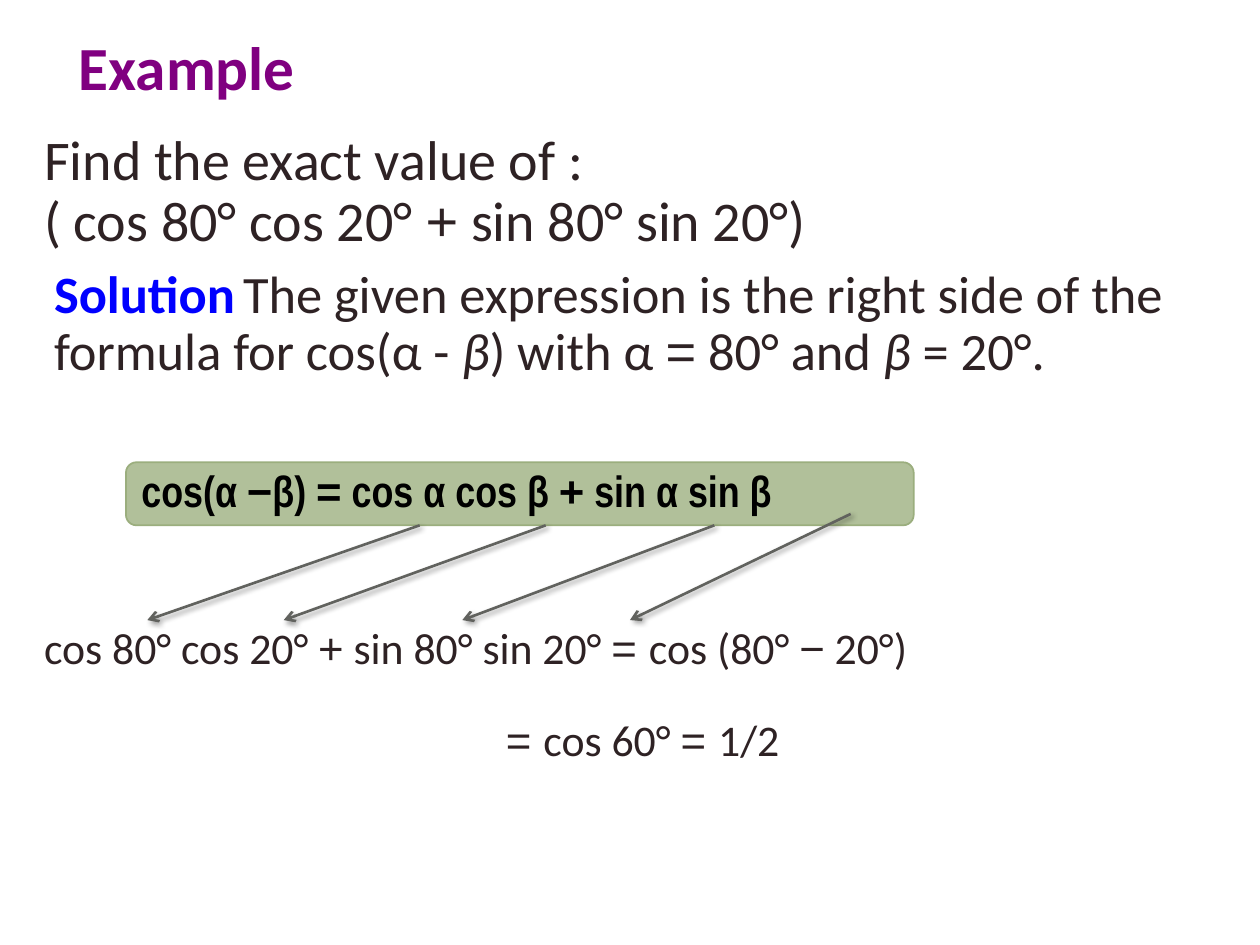
from lxml import etree
from pptx import Presentation
from pptx import util as u
from pptx.dml.color import RGBColor
from pptx.enum import shapes, text
from pptx.oxml import parse_xml
from pptx.oxml.ns import nsdecls, qn

SHADOW = f"""<a:effectLst {nsdecls('a')}>
  <a:outerShdw blurRad="38100" dist="25400" dir="2700000" rotWithShape="0">
    <a:srgbClr val="000000"><a:alpha val="40000"/></a:srgbClr>
  </a:outerShdw>
</a:effectLst>"""


def colour(value):
    return RGBColor.from_string(value)


class Board:
    ink = "2E2224"
    body = "Calibri"
    symbol = "Arial"

    def __init__(self, deck):
        self.page = deck.slides.add_slide(deck.slide_layouts[6])

    def fill_para(self, para, spans, size, ink=ink, font=body, bold=None, spacing=0.9):
        para.line_spacing = spacing
        para.alignment = text.PP_ALIGN.LEFT
        para.font.size = u.Pt(size)
        para.font.color.rgb = colour(ink)
        para.font.bold = bold
        names = {span.get("font", font) for _, span in spans}
        if len(names) == 1:
            para.font.name = names.pop()
        for words, style in spans:
            span = para.add_run()
            span.text = words
            if para.font.name is None:
                span.font.name = style.get("font", font)
            span.font.bold = style.get("bold")
            span.font.italic = style.get("italic")
            if "ink" in style:
                span.font.color.rgb = colour(style["ink"])

    def text_box(self, left, top, width, height, lines, size, **style):
        box = self.page.shapes.add_textbox(u.Cm(left), u.Cm(top), u.Cm(width), u.Cm(height))
        frame = box.text_frame
        frame.word_wrap = True
        for index, spans in enumerate(lines):
            para = frame.add_paragraph() if index else frame.paragraphs[0]
            self.fill_para(para, spans, size, **style)
        return frame

    def panel(self, left, top, width, height, spans, size, fill, edge, **style):
        box = self.page.shapes.add_shape(
            shapes.MSO_SHAPE.ROUNDED_RECTANGLE,
            u.Cm(left), u.Cm(top), u.Cm(width), u.Cm(height))
        box.shadow.inherit = False
        box.fill.solid()
        box.fill.fore_color.rgb = colour(fill)
        box.line.color.rgb = colour(edge)
        box.line.width = u.Pt(1)
        frame = box.text_frame
        frame.word_wrap = False
        frame.vertical_anchor = text.MSO_ANCHOR.MIDDLE
        self.fill_para(frame.paragraphs[0], spans, size, **style)

    def arrow(self, start, end, ink="61625E"):
        line = self.page.shapes.add_connector(
            shapes.MSO_CONNECTOR.STRAIGHT, *(u.Cm(value) for value in (*start, *end)))
        line.line.color.rgb = colour(ink)
        line.line.width = u.Pt(1.5)
        properties = line._element.spPr
        etree.SubElement(properties.find(qn("a:ln")), qn("a:tailEnd"), type="arrow")
        properties.append(parse_xml(SHADOW))


def main():
    deck = Presentation()
    deck.slide_width, deck.slide_height = u.Cm(25.4), u.Cm(19.05)
    board = Board(deck)
    plain, italic, symbol = {}, {"italic": True}, {"font": Board.symbol}

    board.text_box(0.64, 2.54, 22.86, 1.7, [
        [("Find the exact value of :", plain)],
        [("( cos 80° cos 20° ", plain), ("+", symbol), (" sin 80° sin 20°)", plain)],
    ], 32)

    board.text_box(0.84, 5.28, 23.06, 1.9, [[
        ("Solution", {"bold": True, "ink": "0000FF"}),
        ("\tThe given expression is the right side of the formula for cos(α - ", plain),
        ("β", italic), (") with α ", plain), ("=", symbol), (" 80° and ", plain),
        ("β", italic), (" = 20°.", plain),
    ]], 30)

    working = board.text_box(0.64, 12.5, 24.13, 1.07, [
        [("cos 80° cos 20° ", plain), ("+", symbol), (" sin 80° sin 20° ", plain),
         ("= ", symbol), ("cos (80° ", plain), ("−", symbol), (" 20°)", plain)],
        [("= ", symbol), ("cos 60° ", plain), ("= ", symbol), ("1/2", plain)],
    ], 25)
    result = working.paragraphs[1]
    result.alignment = text.PP_ALIGN.CENTER
    result.space_before = u.Pt(26)
    result._p.get_or_add_pPr().set("marL", str(u.Cm(0.5)))

    board.panel(2.54, 9.32, 15.88, 1.27, [
        ("cos(α ", plain), ("−", symbol), ("β) ", plain), ("=", symbol),
        (" cos α cos β ", plain), ("+", symbol), (" sin α sin β", plain),
    ], 25, fill="B1C09A", edge="9BAE7E", ink="000000", font="Arial Narrow", bold=True)

    title = board.text_box(1.34, 0.64, 21.3, 1.37, [[("Example", plain)]], 35,
                           ink="800080", bold=True, spacing=1.0)
    title.vertical_anchor = text.MSO_ANCHOR.MIDDLE

    for start_x, start_y, end_x in ((8.46, 10.59, 2.97), (11, 10.59, 5.72),
                                    (14.4, 10.59, 9.32), (17.15, 10.36, 12.7)):
        board.arrow((start_x, start_y), (end_x, 12.5))

    deck.save("out.pptx")


if __name__ == "__main__":
    main()
